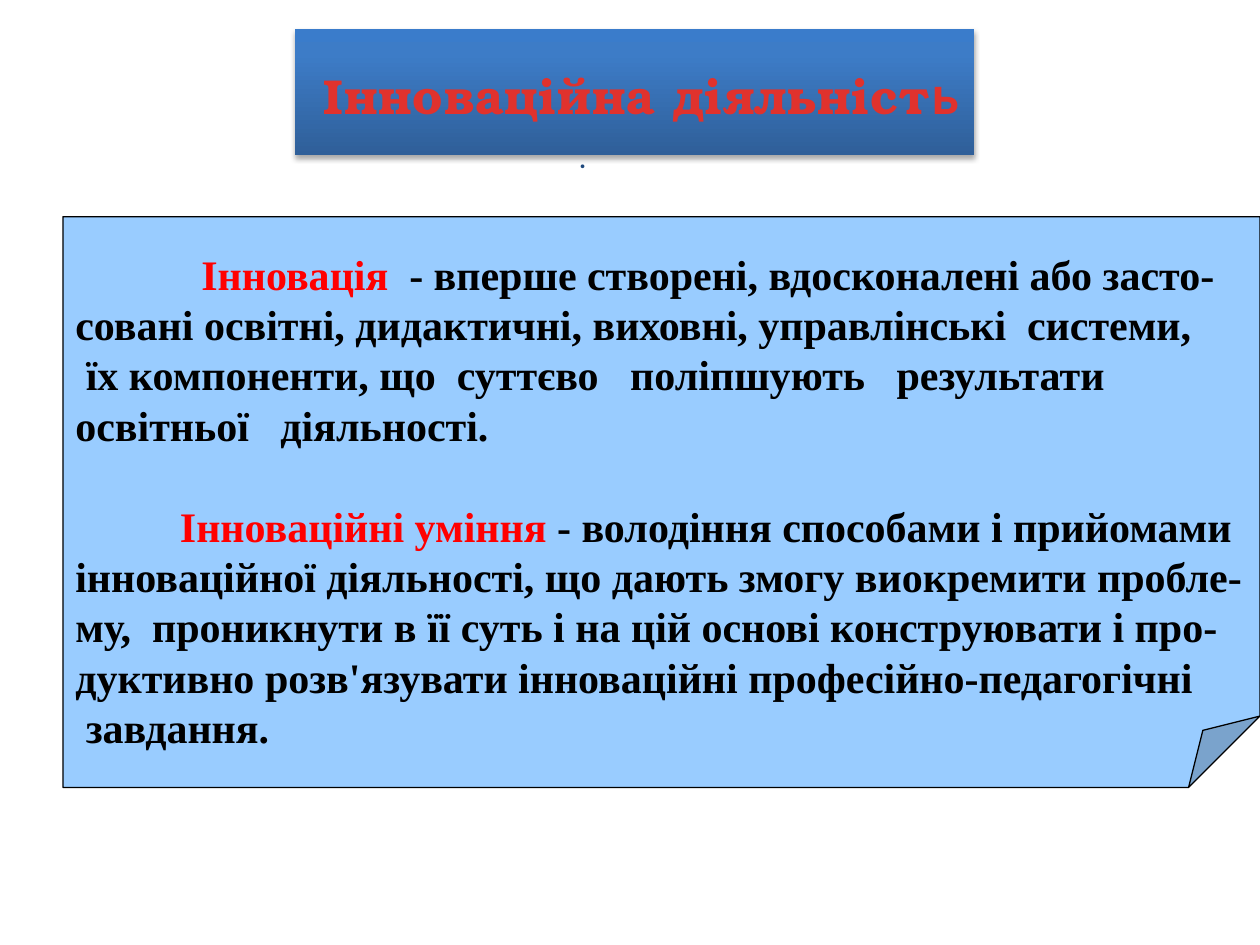
from dataclasses import dataclass

from pptx import Presentation
from pptx.dml.color import RGBColor
from pptx.enum.shapes import MSO_SHAPE
from pptx.enum.text import MSO_ANCHOR, PP_ALIGN
from pptx.oxml import parse_xml
from pptx.util import Inches, Pt

RECTANGLE, FOLDED_CORNER = MSO_SHAPE.RECTANGLE, MSO_SHAPE.FOLDED_CORNER
TOP, MIDDLE, BOTTOM = MSO_ANCHOR.TOP, MSO_ANCHOR.MIDDLE, MSO_ANCHOR.BOTTOM
LEFT, CENTER = PP_ALIGN.LEFT, PP_ALIGN.CENTER

COLORS = {
    "black": "000000",
    "term": "FF0000",
    "note": "99CCFF",
    "title": "E0322D",
    "navy": "1F497D",
    "banner_dark": "2F5F99",
    "banner_mid": "3D7CC7",
    "banner_light": "3A7CCB",
}
NAMESPACE = 'xmlns:a="http://schemas.openxmlformats.org/drawingml/2006/main"'
LINE_HEIGHT = Pt(28.8)


@dataclass
class Span:
    text: str
    color: str = "black"
    size: float = 24
    font: str = "Times New Roman"


@dataclass
class Line:
    spans: list[Span]
    indent: float = 0
    gap_before: bool = False


DEFINITIONS = [
    Line([Span("Інновація", "term"),
          Span("  - вперше створені, вдосконалені або засто-")], indent=1),
    Line([Span("совані освітні, дидактичні, виховні, управлінські  системи,")]),
    Line([Span(" їх компоненти, що  суттєво   поліпшують   результати")]),
    Line([Span("освітньої   діяльності.")]),
    Line([Span("Інноваційні уміння ", "term"),
          Span("- володіння способами і прийомами")], indent=0.83, gap_before=True),
    Line([Span("інноваційної діяльності, що дають змогу виокремити пробле-")]),
    Line([Span("му,  проникнути в її суть і на цій основі конструювати і про-")]),
    Line([Span("дуктивно розв'язувати інноваційні професійно-педагогічні")]),
    Line([Span(" завдання.")]),
]
TITLE = [
    Span(" ", "title", 32, "Calibri"),
    Span("Інноваційна діяльніст", "title", 28, "TeX Gyre Bonum"),
    Span("ь", "title", 32, "Calibri"),
]


def rgb(name: str) -> RGBColor:
    return RGBColor.from_string(COLORS[name])


def add_spans(para, spans: list[Span], spacing: int = 0) -> None:
    para.font.bold = True
    for span in spans:
        run = para.add_run()
        run.text = span.text
        run.font.bold = True
        run.font.size = Pt(span.size)
        run.font.name = span.font
        run.font.color.rgb = rgb(span.color)
        if spacing:
            run.font._element.set("spc", str(spacing))


def add_dot(slide) -> None:
    box = slide.shapes.add_textbox(Inches(0.5), Inches(0), Inches(8.25), Inches(1.42))
    frame = box.text_frame
    frame.word_wrap = True
    frame.vertical_anchor = BOTTOM
    para = frame.paragraphs[0]
    para.alignment = CENTER
    add_spans(para, [Span(".", "navy", 11, "Montserrat")])


def add_banner(slide) -> None:
    banner = slide.shapes.add_shape(
        RECTANGLE, Inches(2.34), Inches(0.23), Inches(5.39), Inches(1))
    banner.line.fill.background()
    stops = [(0, "banner_dark"), (80, "banner_mid"), (100, "banner_light")]
    stop_xml = "".join(
        f'<a:gs pos="{place * 1000}"><a:srgbClr val="{COLORS[name]}"/></a:gs>'
        for place, name in stops)
    properties = banner._element.spPr
    properties.insert(2, parse_xml(
        f'<a:gradFill {NAMESPACE} rotWithShape="1"><a:gsLst>{stop_xml}</a:gsLst>'
        '<a:lin ang="16200000" scaled="0"/></a:gradFill>'))
    properties.append(parse_xml(
        f'<a:effectLst {NAMESPACE}><a:outerShdw blurRad="{Pt(3.1)}" dist="{Pt(1.8)}" '
        f'dir="5400000" rotWithShape="0"><a:srgbClr val="{COLORS["black"]}">'
        '<a:alpha val="35000"/></a:srgbClr></a:outerShdw></a:effectLst>'))
    frame = banner.text_frame
    frame.word_wrap = False
    frame.vertical_anchor = MIDDLE
    para = frame.paragraphs[0]
    para.alignment = CENTER
    add_spans(para, TITLE, spacing=50)


def add_note(slide) -> None:
    note = slide.shapes.add_shape(
        FOLDED_CORNER, Inches(0.5), Inches(1.72), Inches(9.5), Inches(4.53))
    geometry = note._element.spPr.prstGeom
    geometry.get_or_add_avLst().append(
        parse_xml(f'<a:gd {NAMESPACE} name="adj" fmla="val 12500"/>'))
    note.shadow.inherit = False
    note.fill.solid()
    note.fill.fore_color.rgb = rgb("note")
    note.line.color.rgb = rgb("black")
    note.line.width = Pt(0.75)
    frame = note.text_frame
    frame.word_wrap = True
    frame.vertical_anchor = TOP
    frame.margin_top = Inches(0.25)
    frame.margin_right = frame.margin_bottom = Inches(0)
    for index, line in enumerate(DEFINITIONS):
        para = frame.add_paragraph() if index else frame.paragraphs[0]
        para.alignment = LEFT
        para.line_spacing = LINE_HEIGHT
        if line.gap_before:
            para.space_before = LINE_HEIGHT
        para._p.get_or_add_pPr().set("indent", str(Inches(line.indent)))
        add_spans(para, line.spans)


def main() -> None:
    deck = Presentation()
    deck.slide_width, deck.slide_height = Inches(10), Inches(7.5)
    page = deck.slides.add_slide(deck.slide_layouts[6])
    add_dot(page)
    add_banner(page)
    add_note(page)
    deck.save("out.pptx")


if __name__ == "__main__":
    main()
